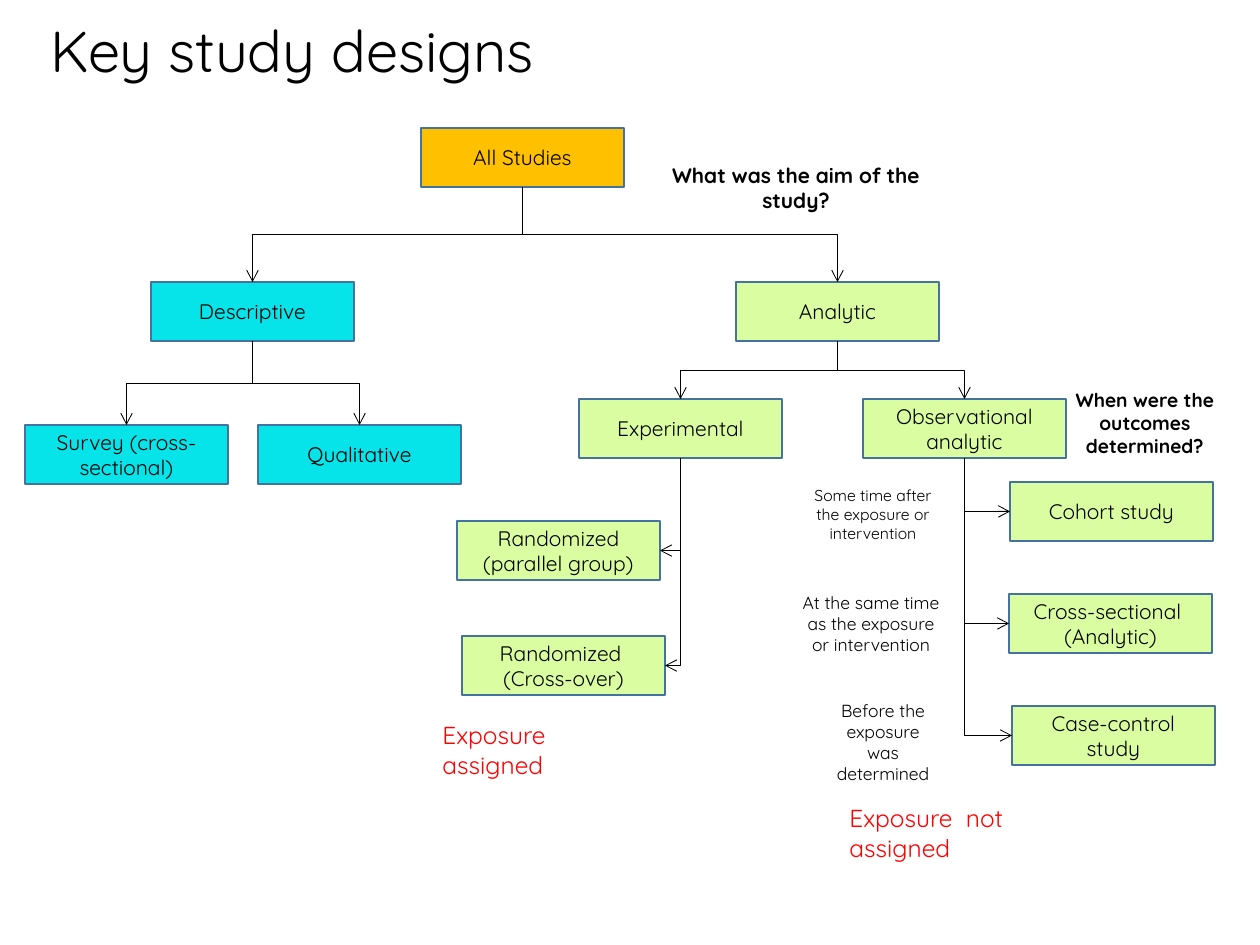
from lxml.etree import SubElement
from pptx import Presentation
from pptx.dml.color import RGBColor
from pptx.enum.shapes import MSO_CONNECTOR, MSO_SHAPE
from pptx.enum.text import MSO_ANCHOR, PP_ALIGN
from pptx.oxml.ns import qn
from pptx.util import Inches, Pt

PX = Inches(1) // 126
FONT = "Quicksand"
BLACK = RGBColor(0x00, 0x00, 0x00)
RED = RGBColor(0xFF, 0x00, 0x00)
ORANGE = RGBColor(0xFF, 0xC0, 0x00)
CYAN = RGBColor(0x07, 0xE4, 0xE9)
GREEN = RGBColor(0xDA, 0xFD, 0xA1)
BORDER = RGBColor(0x43, 0x73, 0x9E)

BOX_WIDTH, BOX_HEIGHT = 203, 59
TOP, LEFT, BOTTOM, RIGHT = range(4)  # connection sites of a rectangle

# name: (left, top, fill, lines)
STUDIES = {
    "all": (421, 128, ORANGE, ["All Studies"]),
    "descriptive": (151, 282, CYAN, ["Descriptive"]),
    "analytic": (736, 282, GREEN, ["Analytic"]),
    "survey": (25, 425, CYAN, ["Survey (cross-sectional)"]),
    "qualitative": (258, 425, CYAN, ["Qualitative"]),
    "experimental": (579, 399, GREEN, ["Experimental"]),
    "observational": (863, 399, GREEN, ["Observational analytic"]),
    "parallel": (457, 521, GREEN, ["Randomized", "(parallel group)"]),
    "crossover": (462, 636, GREEN, ["Randomized ", "(Cross-over)"]),
    "cohort": (1010, 482, GREEN, ["Cohort study"]),
    "cross-sectional": (1009, 594, GREEN, ["Cross-sectional ", "(Analytic)"]),
    "case-control": (1012, 706, GREEN, ["Case-control study"]),
}

# (parent, children, side where the arrow enters)
BRANCHES = [
    ("all", ["descriptive", "analytic"], TOP),
    ("descriptive", ["survey", "qualitative"], TOP),
    ("analytic", ["experimental", "observational"], TOP),
    ("experimental", ["parallel", "crossover"], RIGHT),
    ("observational", ["cohort", "cross-sectional", "case-control"], LEFT),
]

# (left, top, width, height, size, bold, text)
QUESTIONS = [
    (648, 156, 296, 63, 12, True, "What was the aim of the study?"),
    (1056, 382, 178, 83, 11, True, "When were the outcomes determined?"),
    (791, 480, 164, 71, 9, False, "Some time after the exposure or intervention"),
    (786, 586, 170, 77, 10, False, "At the same time as the exposure or intervention"),
    (816, 694, 134, 77, 10, False, "Before the exposure was determined"),
]

# (left, top, width, height, text)
EXPOSURES = [
    (430, 714, 236, 43, "Exposure assigned"),
    (837, 797, 284, 43, "Exposure  not assigned"),
]


def write(frame, lines, size, color=BLACK, bold=False, align=PP_ALIGN.CENTER):
    frame.word_wrap = True
    for index, line in enumerate(lines):
        para = frame.add_paragraph() if index else frame.paragraphs[0]
        para.alignment = align
        span = para.add_run()
        span.text = line
        span.font.name = FONT
        span.font.size = Pt(size)
        span.font.bold = bold
        span.font.color.rgb = color


def add_text(page, left, top, width, height, *style, **options):
    box = page.shapes.add_textbox(left * PX, top * PX, width * PX, height * PX)
    write(box.text_frame, *style, **options)
    return box.text_frame


def add_study(page, left, top, fill, lines):
    box = page.shapes.add_shape(
        MSO_SHAPE.RECTANGLE, left * PX, top * PX, BOX_WIDTH * PX, BOX_HEIGHT * PX)
    box.shadow.inherit = False
    box.fill.solid()
    box.fill.fore_color.rgb = fill
    box.line.color.rgb = BORDER
    box.line.width = Pt(1)
    box.text_frame.vertical_anchor = MSO_ANCHOR.MIDDLE
    write(box.text_frame, lines, 12)
    return box


def add_branch(page, parent, child, side):
    """Join the parent's bottom to one side of the child, leaving downwards."""
    x1, y1 = parent.left + parent.width // 2, parent.top + parent.height
    x2 = child.left + {TOP: child.width // 2, LEFT: 0, RIGHT: child.width}[side]
    y2 = child.top + (0 if side == TOP else child.height // 2)

    arrow = page.shapes.add_connector(MSO_CONNECTOR.ELBOW, x1, y1, x2, y2)
    arrow.begin_connect(parent, BOTTOM)
    arrow.end_connect(child, side)
    arrow.line.color.rgb = BLACK
    arrow.line.width = Pt(0.5)

    # An elbow starts sideways, so its frame is turned a quarter about its centre.
    arrow.width, arrow.height = y2 - y1, abs(x2 - x1)
    arrow.left = (x1 + x2 - arrow.width) // 2
    arrow.top = (y1 + y2 - arrow.height) // 2
    rightward = x2 > x1
    properties = arrow.element.spPr
    frame = properties.find(qn("a:xfrm"))
    frame.set("rot", str((270 if rightward else 90) * 60000))
    frame.set("flipH", "1" if rightward else "0")
    frame.set("flipV", "0")
    if side != TOP:
        properties.find(qn("a:prstGeom")).set("prst", "bentConnector2")
    SubElement(properties.find(qn("a:ln")), qn("a:tailEnd"), type="arrow")
    SubElement(properties, qn("a:effectLst"))


def main():
    deck = Presentation()
    deck.slide_width, deck.slide_height = Inches(10), Inches(7.5)
    page = deck.slides.add_slide(deck.slide_layouts[6])

    boxes = {name: add_study(page, *study) for name, study in STUDIES.items()}
    for parent, children, side in BRANCHES:
        for child in children:
            add_branch(page, boxes[parent], boxes[child], side)

    title = add_text(page, 38, 16, 1222, 95, ["Key study designs"], 33,
                     align=PP_ALIGN.LEFT)
    title.paragraphs[0].line_spacing = 0.9
    for *place, size, bold, text in QUESTIONS:
        add_text(page, *place, [text], size, bold=bold)
    for *place, text in EXPOSURES:
        frame = add_text(page, *place, [text], 14, RED, align=PP_ALIGN.LEFT)
        frame.margin_right = 60 * PX  # keeps "assigned" on the second line

    deck.save("out.pptx")


if __name__ == "__main__":
    main()
